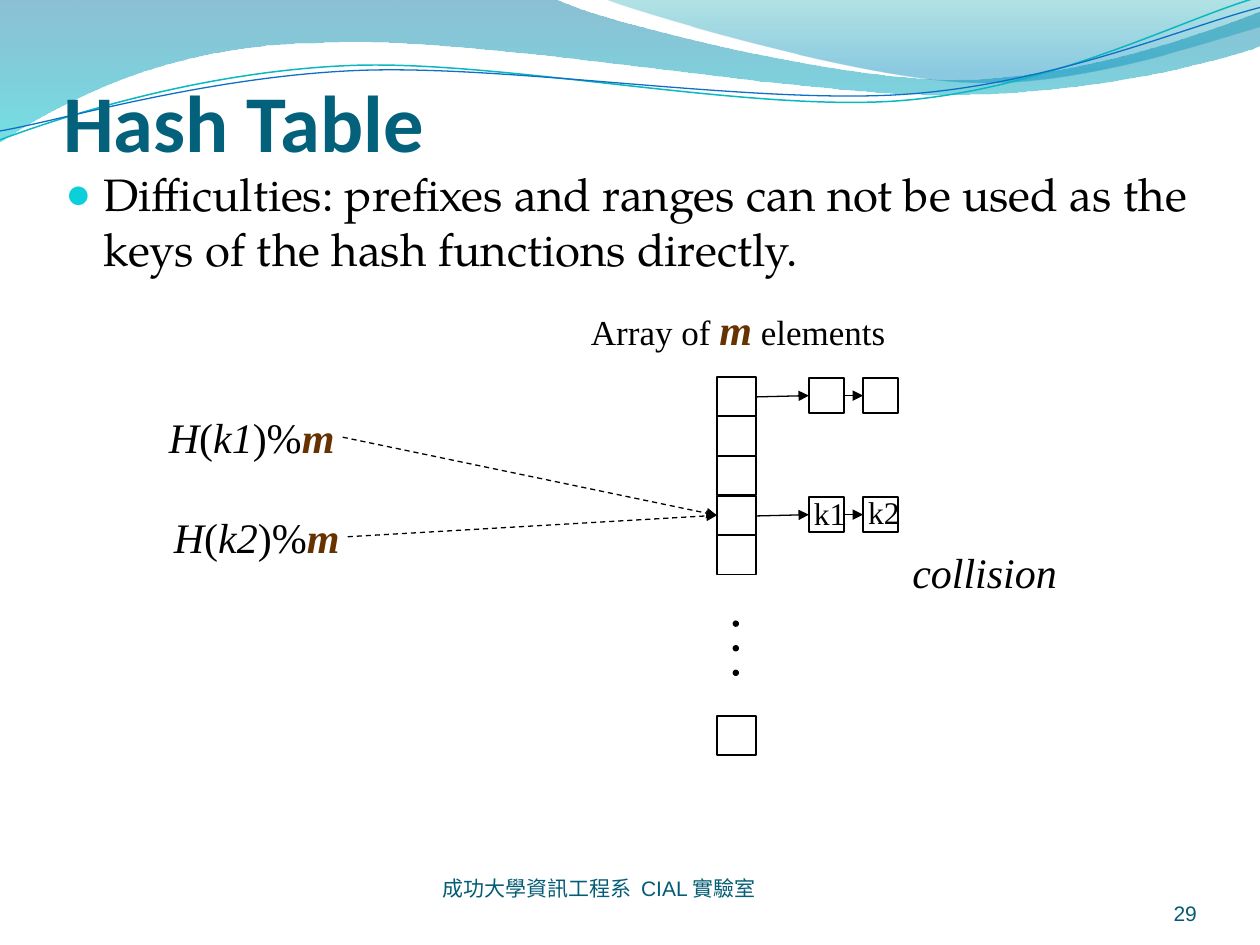
from math import cos, radians, sin

from lxml import etree
from pptx import Presentation
from pptx.dml.color import RGBColor
from pptx.enum.dml import MSO_LINE
from pptx.enum.shapes import MSO_CONNECTOR, MSO_SHAPE
from pptx.enum.text import MSO_ANCHOR, MSO_AUTO_SIZE, PP_ALIGN
from pptx.oxml.ns import qn
from pptx.util import Inches, Pt

RECT, OVAL = MSO_SHAPE.RECTANGLE, MSO_SHAPE.OVAL
STRAIGHT, DASH = MSO_CONNECTOR.STRAIGHT, MSO_LINE.DASH
TOP, BOTTOM = MSO_ANCHOR.TOP, MSO_ANCHOR.BOTTOM
LEFT, CENTER, RIGHT = PP_ALIGN.LEFT, PP_ALIGN.CENTER, PP_ALIGN.RIGHT

BLACK = RGBColor(0x00, 0x00, 0x00)
BROWN = RGBColor(0x66, 0x33, 0x00)
TITLE_BLUE = RGBColor(0x04, 0x61, 0x7B)
FOOTER_BLUE = RGBColor(0x04, 0x5C, 0x75)
BULLET_CYAN = RGBColor(0x0B, 0xD0, 0xD9)
WAVE_TEAL = RGBColor(0x0A, 0xB8, 0xBF)
WAVE_BLUE = RGBColor(0x0F, 0x6F, 0xC6)
BAND_DEEP = RGBColor(0x00, 0x74, 0xA1)
BAND_AQUA = RGBColor(0x00, 0xC6, 0xCF)
CREST_AQUA = RGBColor(0x00, 0xA1, 0xA9)
CREST_BLUE = RGBColor(0x00, 0x8B, 0xBF)

SERIF, SANS, CJK = "Times New Roman", "Arial", "Noto Sans CJK SC"
BODY = {"name": "TeX Gyre Pagella", "size": Pt(26), "color": BLACK}
TITLE = {"name": "Calibri", "size": Pt(46), "bold": True, "color": TITLE_BLUE}
PLAIN = {"name": SERIF, "size": Pt(24), "color": BLACK}
ITALIC = {**PLAIN, "italic": True}
MODULUS = {**ITALIC, "bold": True, "color": BROWN}
CAPTION = {**PLAIN, "size": Pt(20)}
KEY = {**PLAIN, "size": Pt(18)}
FOOTER = {"name": SANS, "size": Pt(12), "color": FOOTER_BLUE}
FOOTER_CJK = {**FOOTER, "name": CJK}

ARRAY_X, ARRAY_Y, CELL, PITCH = 5.69, 2.99, 0.31, 0.315
NODE_X, NODE, NODE_PITCH = 6.42, 0.28, 0.43
WAVE_TILT = -2.7

BAND = [(0, -0.01), (4.4, -0.01),
        (4.76, 0.17, 6.64, 0.63, 7.58, 0.63), (8.53, 0.63, 9.58, 0.26, 10, 0.09),
        (10.01, 0.36), (9.83, 0.44, 8.7, 0.76, 7.46, 0.75),
        (6.22, 0.75, 3.82, 0.28, 2.57, 0.34), (1.29, 0.35, 0.46, 0.83, -0.01, 1.13)]
CREST = [(4.79, -0.01), (5.09, 0.11, 6.82, 0.62, 7.69, 0.65),
         (8.56, 0.69, 9.61, 0.32, 10, 0.21), (10, 0)]
TEAL_WAVE = [(0, 1.11), (0.48, 0.93, 1.58, 0.57, 2.77, 0.52),
             (3.95, 0.47, 5.93, 0.89, 7.13, 0.8), (8.33, 0.71, 9.38, 0.15, 9.98, -0.02)]
BLUE_WAVE = [(0, 1.04), (0.47, 0.96, 1.64, 0.61, 2.83, 0.56),
             (4.03, 0.51, 5.97, 0.83, 7.17, 0.75), (8.36, 0.67, 9.41, 0.21, 10, 0.06)]


def level(x, y, center):
    a = radians(-WAVE_TILT)
    dx, dy = x - center[0], y - center[1]
    return center[0] + dx * cos(a) - dy * sin(a), center[1] + dx * sin(a) + dy * cos(a)


def add_outline(s, outline, close, center=None):
    points = [step[i:i + 2] for step in outline for i in range(0, len(step), 2)]
    if center:
        points = [level(x, y, center) for x, y in points]
    points = [(Inches(x), Inches(y)) for x, y in points]
    builder = s.shapes.build_freeform(*points[0])
    builder.add_line_segments(points[1:], close=close)
    sp = builder.convert_to_shape()
    sp.shadow.inherit = False
    lines = iter(list(sp.element.iter(qn("a:lnTo"))))
    for step in outline[1:]:
        first = next(lines)
        if len(step) == 6:
            first.tag = qn("a:cubicBezTo")
            for _ in range(2):
                line = next(lines)
                first.append(line[0])
                line.getparent().remove(line)
    return sp


def add_band(s, outline, stops):
    sp = add_outline(s, outline, True)
    sp.line.fill.background()
    sp.fill.gradient()
    sp.fill.gradient_angle = 270
    for stop, (position, color, _) in zip(sp.fill.gradient_stops, stops):
        stop.position = position
        stop.color.rgb = color
    for clr, (_, _, opacity) in zip(sp.element.iter(qn("a:srgbClr")), stops):
        etree.SubElement(clr, qn("a:alpha"), val=str(opacity * 1000))


def add_wave(s, outline, center, color, width):
    sp = add_outline(s, outline, False, center)
    sp.rotation = WAVE_TILT
    sp.fill.background()
    sp.line.color.rgb = color
    sp.line.width = Pt(width)


def add_box(s, x, y, size, kind=RECT, fill=None, width=1):
    sp = s.shapes.add_shape(kind, *map(Inches, (x, y, size, size)))
    sp.shadow.inherit = False
    if fill is None:
        sp.fill.background()
    else:
        sp.fill.solid()
        sp.fill.fore_color.rgb = fill
    sp.line.color.rgb = BLACK
    sp.line.width = Pt(width)


def add_arrow(s, start, end, dash=None):
    cx = s.shapes.add_connector(STRAIGHT, *map(Inches, (*start, *end)))
    cx.line.color.rgb = BLACK
    cx.line.width = Pt(0.75)
    if dash is not None:
        cx.line.dash_style = dash
    etree.SubElement(cx.element.spPr.find(qn("a:ln")), qn("a:tailEnd"), type="triangle")
    etree.SubElement(cx.element.spPr, qn("a:effectLst"))


def add_runs(p, runs):
    for text, style in runs:
        r = p.add_run()
        r.text = text
        for key, value in style.items():
            if key == "color":
                r.font.color.rgb = value
            else:
                setattr(r.font, key, value)
        etree.SubElement(r._r.get_or_add_rPr(), qn("a:ea"), typeface=style["name"])


def set_frame(tf, anchor, insets):
    tf.word_wrap = True
    tf.auto_size = MSO_AUTO_SIZE.NONE
    tf.vertical_anchor = anchor
    for side, inset in zip(("left", "top", "right", "bottom"), insets):
        setattr(tf, f"margin_{side}", Inches(inset))


def add_text(s, at, runs, align=LEFT, anchor=TOP, insets=(0, 0, 0, 0)):
    tf = s.shapes.add_textbox(*map(Inches, at)).text_frame
    set_frame(tf, anchor, insets)
    p = tf.paragraphs[0]
    p.alignment = align
    add_runs(p, runs)
    return p


def add_bullet(p):
    pPr = p._p.get_or_add_pPr()
    pPr.set("marL", str(Inches(0.3)))
    pPr.set("indent", str(-Inches(0.3)))
    clr = etree.SubElement(pPr, qn("a:buClr"))
    etree.SubElement(clr, qn("a:srgbClr"), val=str(BULLET_CYAN))
    etree.SubElement(pPr, qn("a:buSzPct"), val="95000")
    etree.SubElement(pPr, qn("a:buFont"), typeface=SANS)
    etree.SubElement(pPr, qn("a:buChar"), char="●")


def set_title(s, text):
    sp = s.shapes.title
    sp.left, sp.top, sp.width, sp.height = map(Inches, (0.5, 0.49, 9, 0.85))
    set_frame(sp.text_frame, BOTTOM, (0, 0.05, 0, 0))
    p = sp.text_frame.paragraphs[0]
    p.alignment = LEFT
    add_runs(p, [(text, TITLE)])
    sp.element.getparent().append(sp.element)


def add_chain(s, row):
    y = ARRAY_Y + row * PITCH
    middle = y + 0.15
    add_arrow(s, (ARRAY_X + CELL, middle + 0.01), (NODE_X, middle))
    second = NODE_X + NODE_PITCH
    add_arrow(s, (NODE_X + NODE, middle), (second, middle))
    for x in (NODE_X, second):
        add_box(s, x, y + 0.01, NODE)


def add_hash(s, x, y, key):
    add_text(s, (x, y, 1.38, 0.4), [("H", ITALIC), ("(", PLAIN), (key, ITALIC),
                                    (")%", PLAIN), ("m", MODULUS)])
    add_arrow(s, (x + 1.38, y + 0.2), (ARRAY_X, 4.09), DASH)


def main():
    prs = Presentation()
    prs.slide_width, prs.slide_height = Inches(10), Inches(7.5)
    s = prs.slides.add_slide(prs.slide_layouts[5])
    add_band(s, BAND, [(0, BAND_DEEP, 45), (1, BAND_AQUA, 55)])
    add_band(s, CREST, [(0, CREST_AQUA, 30), (0.8, CREST_BLUE, 45)])
    add_wave(s, TEAL_WAVE, (4.99, 0.58), WAVE_TEAL, 0.85)
    add_wave(s, BLUE_WAVE, (5, 0.59), WAVE_BLUE, 0.75)
    set_title(s, "Hash Table")
    add_bullet(add_text(
        s, (0.5, 1.31, 9, 1.14),
        [("Difficulties: prefixes and ranges can not be used as the keys of the "
          "hash functions directly.", BODY)], insets=(0.02, 0.01, 0.02, 0.01)))

    add_text(s, (4.69, 2.41, 2.36, 0.4),
             [("Array of ", CAPTION), ("m", MODULUS), (" elements", CAPTION)])
    for y in [ARRAY_Y + row * PITCH for row in range(5)] + [5.68]:
        add_box(s, ARRAY_X, y, CELL)
    for i in range(3):
        add_box(s, 5.82, 4.93 + i * 0.195, 0.04, OVAL, BLACK, 0.75)
    for row in (0, 3):
        add_chain(s, row)
    add_hash(s, 1.34, 3.27, "k1")
    add_hash(s, 1.38, 4.06, "k2")
    for x, y, key in ((6.46, 3.92, "k1"), (6.89, 3.91, "k2")):
        add_text(s, (x, y, 0.28, 0.3), [(key, KEY)])
    add_text(s, (7.24, 4.34, 1.38, 0.4), [("collision", ITALIC)])
    add_text(s, (2.92, 6.95, 3.67, 0.2),
             [("成功大學資訊工程系  ", FOOTER_CJK), ("CIAL", FOOTER),
              (" 實驗室", FOOTER_CJK)], CENTER, BOTTOM)
    add_text(s, (8.67, 6.95, 0.83, 0.4), [("29", FOOTER)], RIGHT, BOTTOM)
    prs.save("out.pptx")


if __name__ == "__main__":
    main()
